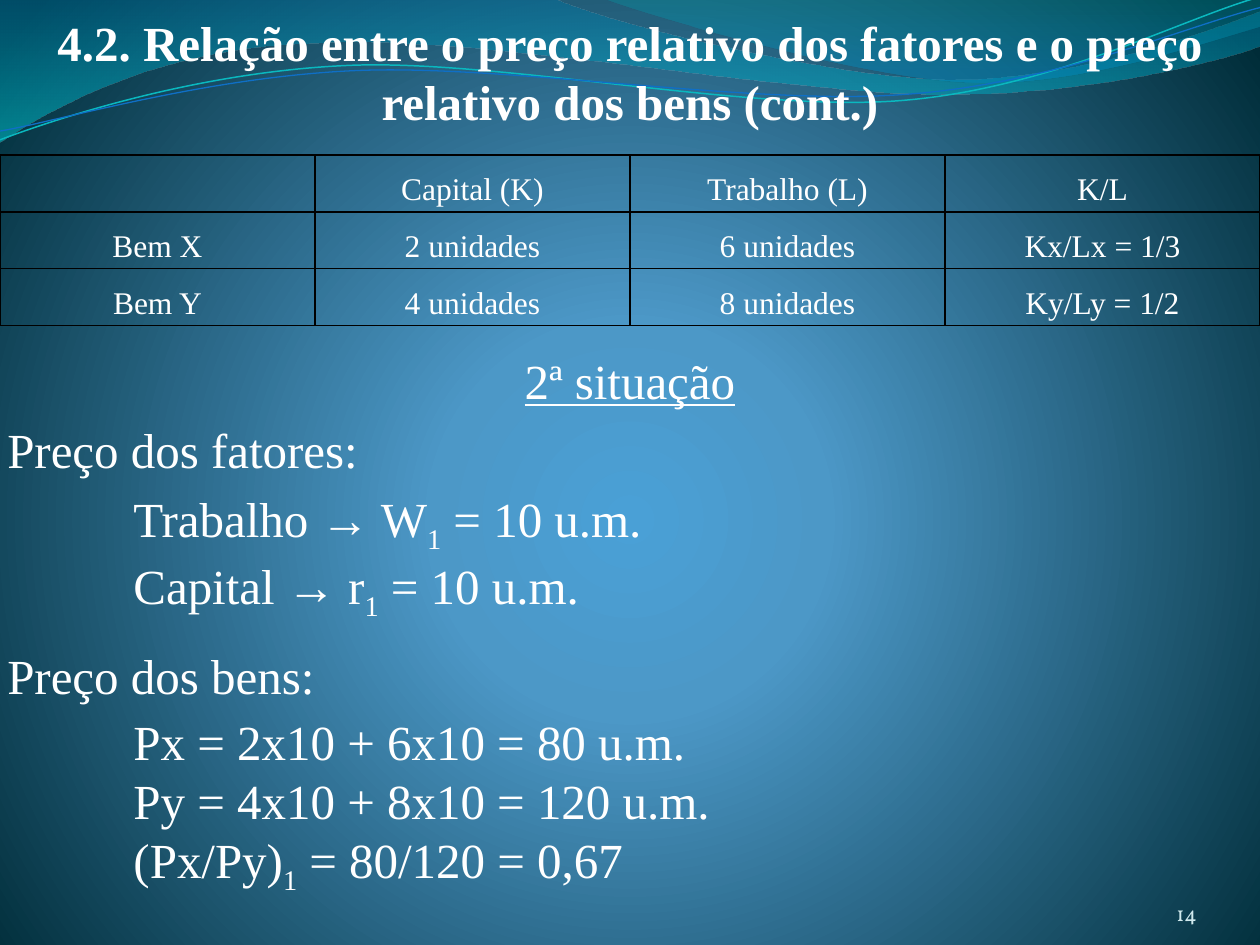
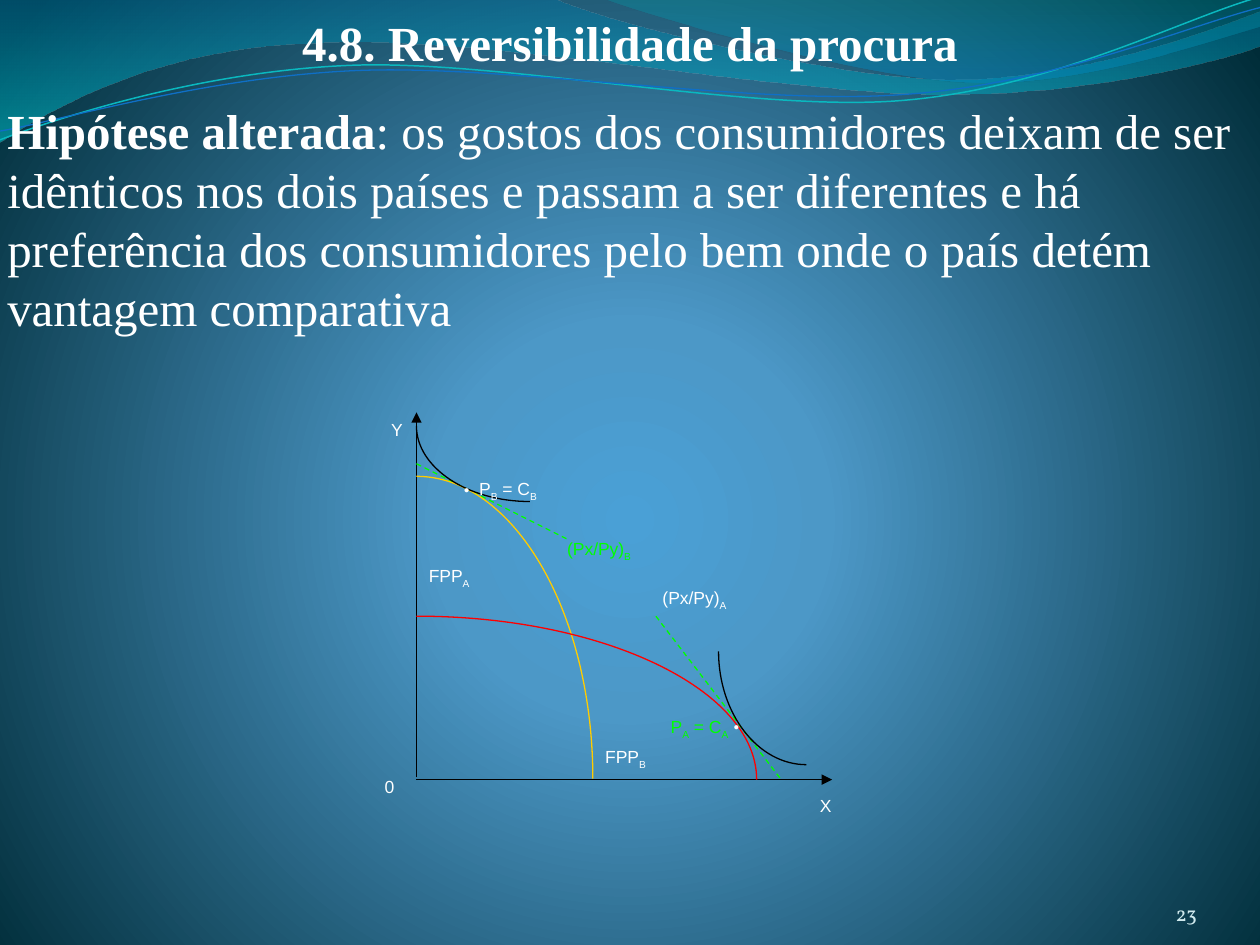
"""Build two slides on relative prices and demand reversal."""
from collections import namedtuple
from dataclasses import dataclass

from lxml import etree
from pptx import Presentation
from pptx.dml.color import RGBColor
from pptx.enum.dml import MSO_LINE
from pptx.enum.shapes import MSO_CONNECTOR
from pptx.enum.text import MSO_ANCHOR, PP_ALIGN
from pptx.oxml import parse_xml
from pptx.oxml.ns import nsdecls, qn
from pptx.util import Pt

CENTER, LEFT, RIGHT = PP_ALIGN.CENTER, PP_ALIGN.LEFT, PP_ALIGN.RIGHT
TOP, MIDDLE, BOTTOM = MSO_ANCHOR.TOP, MSO_ANCHOR.MIDDLE, MSO_ANCHOR.BOTTOM
DASH = MSO_LINE.DASH
STRAIGHT = MSO_CONNECTOR.STRAIGHT

TextStyle = namedtuple("TextStyle", "font size color subscript bold")
Gradient = namedtuple("Gradient", "stops direction")


@dataclass(frozen=True)
class Theme:
    black: str = "000000"
    yellow: str = "FFCC00"
    red: str = "FF0000"
    wave_teal: str = "0AB8BF"
    wave_blue: str = "0F6FC6"
    title: TextStyle = TextStyle("Times New Roman", 28, "FFFFFF", -25, True)
    body: TextStyle = TextStyle("Times New Roman", 28, "FFFFFF", -25, False)
    cell: TextStyle = TextStyle("Times New Roman", 18, "FFFFFF", -25, False)
    dot: TextStyle = TextStyle("Times New Roman", 10, "FFFFFF", -30, False)
    label: TextStyle = TextStyle("Arial", 10, "FFFFFF", -30, False)
    price: TextStyle = TextStyle("Arial", 10, "00FF00", -30, False)
    number: TextStyle = TextStyle("Vollkorn", 12, "D1EAEE", -25, False)
    curve_width: float = 0.75
    border_width: float = 1
    background: Gradient = Gradient(
        [(0, "4AA0D6", ""), (25, "4C98C7", ""), (100, "002C38", "")],
        '<a:path path="circle"><a:fillToRect l="10000" t="110000" r="10000" b="100000"/></a:path>')
    large_wave: Gradient = Gradient(
        [(0, "0074A1", '<a:alpha val="45000"/>'), (100, "00C6CF", '<a:alpha val="55000"/>')],
        '<a:lin ang="5400000" scaled="1"/>')
    small_wave: Gradient = Gradient(
        [(0, "00A1A9", '<a:alpha val="30000"/>'), (80, "008BBF", '<a:alpha val="45000"/>')],
        '<a:lin ang="5400000" scaled="1"/>')


THEME = Theme()


def add_text(frame, paragraphs, style, alignment=LEFT):
    """Write paragraphs of runs; a run is a string or a (string, mark) pair."""
    for index, runs in enumerate(paragraphs):
        paragraph = frame.add_paragraph() if index else frame.paragraphs[0]
        paragraph.alignment = alignment
        for item in runs:
            text, mark = (item, "") if isinstance(item, str) else item
            run = paragraph.add_run()
            run.text = text
            run.font.name = style.font
            run.font.size = Pt(style.size)
            run.font.color.rgb = RGBColor.from_string(style.color)
            run.font.bold = style.bold or mark == "bold"
            if mark == "underline":
                run.font.underline = True
            if mark == "subscript":
                run.font._element.set("baseline", str(style.subscript * 1000))


def add_curve(slide, start, segments, color=None, width=0.75, gradient=None):
    """Draw line and cubic segments, as an open stroke or a gradient area."""
    points = [(Pt(x), Pt(y)) for segment in segments for x, y in segment]
    builder = slide.shapes.build_freeform(Pt(start[0]), Pt(start[1]))
    builder.add_line_segments(points, close=gradient is not None)
    shape = builder.convert_to_shape()
    shape.shadow.inherit = False
    shape.fill.background()
    properties = shape._element.spPr
    steps = iter(list(properties.iter(qn("a:lnTo"))))
    for segment in segments:
        corners = [next(steps) for _ in segment]
        if len(corners) == 3:
            cubic = etree.Element(qn("a:cubicBezTo"))
            corners[0].addprevious(cubic)
            for corner in corners:
                cubic.append(corner[0])
                corner.getparent().remove(corner)
    if gradient:
        shape.line.fill.background()
        properties.replace(properties.find(qn("a:noFill")), parse_xml(gradient))
    else:
        shape.line.color.rgb = RGBColor.from_string(color)
        shape.line.width = Pt(width)
    return shape


gradients = {}
for name in ("background", "large_wave", "small_wave"):
    gradient = getattr(THEME, name)
    stops = "".join(
        f'<a:gs pos="{position * 1000}"><a:srgbClr val="{color}">{alpha}</a:srgbClr></a:gs>'
        for position, color, alpha in gradient.stops)
    gradients[name] = (f'<a:gradFill {nsdecls("a")}><a:gsLst>{stops}</a:gsLst>'
                       f'{gradient.direction}</a:gradFill>')

presentation = Presentation()
presentation.slide_width, presentation.slide_height = Pt(720), Pt(540)
master = presentation.slide_master
master.background.fill.solid()
background = master._element.find(".//" + qn("p:bgPr"))
background.replace(background[0], parse_xml(gradients["background"]))
blank_layout = presentation.slide_layouts[6]
slides = [presentation.slides.add_slide(blank_layout) for _ in range(2)]
price_slide, demand_slide = slides

large_wave = [
    [(316.8, -0.7)],
    [(342.7, 12.2), (478.1, 45.4), (545.8, 45.4)],
    [(614.2, 45.4), (689.8, 18.7), (720, 6.5)],
    [(720.7, 25.9)],
    [(707.8, 31.7), (626.4, 54.7), (537.1, 54)],
    [(447.8, 54), (275, 20.2), (185, 24.5)],
    [(92.9, 25.9), (33.1, 59.8), (-0.7, 81.4)],
]
small_wave = [
    [(366.5, 7.9), (491, 44.6), (553.7, 46.8)],
    [(616.3, 49.7), (691.9, 23), (720, 15.1)],
    [(720, 0)],
]
teal_line = [
    [(34.6, 67), (113.8, 41), (199.4, 37.4)],
    [(284.4, 33.8), (427, 64.1), (513.4, 57.6)],
    [(599.8, 51.1), (675.4, 10.8), (718.6, -1.4)],
]
blue_line = [
    [(33.8, 69.1), (118.1, 43.9), (203.8, 40.3)],
    [(290.2, 36.7), (429.8, 60.5), (516.2, 54)],
    [(601.9, 48.2), (677.5, 15.1), (720, 4.3)],
]
waves = [
    add_curve(price_slide, (0, 0), large_wave, gradient=gradients["large_wave"]),
    add_curve(price_slide, (344.9, -0.7), small_wave, gradient=gradients["small_wave"]),
    add_curve(price_slide, (0, 79.9), teal_line, THEME.wave_teal, 0.85),
    add_curve(price_slide, (0, 74.9), blue_line, THEME.wave_blue),
]
for shape_id, wave in enumerate(waves, 20):
    wave._element.nvSpPr.cNvPr.set("id", str(shape_id))
    master.shapes._spTree.append(wave._element)

one = ("1", "subscript")
price_slide_texts = [
    (0, 196.6, 41, 0, CENTER, [[("2ª situação", "underline")]]),
    (-2.9, 236.2, 41, 0, LEFT, [["Preço dos fatores:"]]),
    (-2.9, 280, 75, 72, LEFT, [["Trabalho → W", one, " = 10 u.m."],
                               ["Capital → r", one, " = 10 u.m."]]),
    (-2.9, 365, 41, 0, LEFT, [["Preço dos bens:"]]),
    (-2.9, 405, 108.7, 72, LEFT, [["Px = 2x10 + 6x10 = 80 u.m."],
                                  ["Py = 4x10 + 8x10 = 120 u.m."],
                                  ["(Px/Py)", one, " = 80/120 = 0,67"]]),
]
demand_slide_texts = [
    (-2.9, 53, 143.3, 0, LEFT, [[
        ("Hipótese alterada", "bold"),
        ": os gostos dos consumidores deixam de ser idênticos nos dois países e passam a ser "
        "diferentes e há preferência dos consumidores pelo bem onde o país detém "
        "vantagem comparativa"]]),
]
pages = [
    ("4.2. Relação entre o preço relativo dos fatores e o preço relativo dos bens (cont.)",
     75, "14", price_slide_texts),
    ("4.8. Reversibilidade da procura", 41, "23", demand_slide_texts),
]

for slide, (title, title_height, number, texts) in zip(slides, pages):
    title_frame = slide.shapes.add_textbox(Pt(0), Pt(3.6), Pt(720), Pt(title_height)).text_frame
    title_frame.word_wrap = True
    add_text(title_frame, [[title]], THEME.title, CENTER)

    number_frame = slide.shapes.add_textbox(Pt(624), Pt(500.4), Pt(60), Pt(28.8)).text_frame
    number_frame.word_wrap = True
    number_frame.vertical_anchor = BOTTOM
    number_frame.margin_left = number_frame.margin_right = 0
    number_frame.margin_top = number_frame.margin_bottom = 0
    add_text(number_frame, [[number]], THEME.number, RIGHT)

    for left, top, height, indent, alignment, paragraphs in texts:
        frame = slide.shapes.add_textbox(Pt(left), Pt(top), Pt(720), Pt(height)).text_frame
        frame.word_wrap = True
        frame.vertical_anchor = MIDDLE
        frame.margin_left = Pt(7.2 + indent)
        add_text(frame, paragraphs, THEME.body, alignment)

factor_rows = [
    ["", "Capital (K)", "Trabalho (L)", "K/L"],
    ["Bem X", "2 unidades", "6 unidades", "Kx/Lx = 1/3"],
    ["Bem Y", "4 unidades", "8 unidades", "Ky/Ly = 1/2"],
]
row_height = 32.3
table = price_slide.shapes.add_table(
    3, 4, Pt(0), Pt(88.6), Pt(720), Pt(3 * row_height)).table
table.first_row = table.horz_banding = False
for row, values in zip(table.rows, factor_rows):
    row.height = Pt(row_height)
    for cell, value in zip(row.cells, values):
        cell.margin_left = cell.margin_right = Pt(5)
        cell.margin_top = cell.margin_bottom = 0
        cell.vertical_anchor = TOP
        for side in ("lnL", "lnR", "lnT", "lnB"):
            cell._tc.get_or_add_tcPr().append(parse_xml(
                f'<a:{side} {nsdecls("a")} w="{Pt(THEME.border_width)}"><a:solidFill>'
                f'<a:srgbClr val="{THEME.black}"/></a:solidFill></a:{side}>'))
        cell.fill.background()
        if value:
            add_text(cell.text_frame, [[value]], THEME.cell, CENTER)
            cell.text_frame.paragraphs[0].line_spacing = 1.5

origin_x, origin_y = 238, 445.5
straight_lines = [
    ((origin_x, 444.2), (origin_x, 235.6), THEME.black, True),
    ((origin_x, origin_y), (475.5, origin_y), THEME.black, True),
    ((origin_x, 265), (324.4, 308.2), THEME.price.color, False),
    ((374.8, 352.1), (446.4, origin_y), THEME.price.color, False),
]
for start, end, color, is_axis in straight_lines:
    connector = demand_slide.shapes.add_connector(
        STRAIGHT, *(Pt(value) for value in start + end))
    connector.line.color.rgb = RGBColor.from_string(color)
    connector.line.width = Pt(THEME.curve_width)
    if is_axis:
        connector.line._get_or_add_ln().append(
            parse_xml(f'<a:tailEnd {nsdecls("a")} type="triangle"/>'))
    else:
        connector.line.dash_style = DASH
    connector._element.spPr.append(parse_xml(f'<a:effectLst {nsdecls("a")}/>'))

quarter_ellipses = [
    ((origin_x, 272.2), (338.8, 445), THEME.yellow),
    ((origin_x, 352.1), (432.4, origin_y), THEME.red),
    ((302.8, 286.6), (origin_x, 243.4), THEME.black),
    ((460.8, 437), (410.6, 372.2), THEME.black),
]
for start, end, color in quarter_ellipses:
    first_control = (start[0] + 0.55 * (end[0] - start[0]), start[1])
    second_control = (end[0], end[1] - 0.55 * (end[1] - start[1]))
    add_curve(demand_slide, start, [[first_control, second_control, end]],
              color, THEME.curve_width)

country_a, country_b = ("A", "subscript"), ("B", "subscript")
diagram_labels = [
    (252.2, 270, 5.56, ["•"], THEME.dot),
    (403.6, 405.4, 8.34, ["•"], THEME.dot),
    (461.5, 451, 0, ["X"], THEME.label),
    (216.4, 235.8, 0, ["Y"], THEME.label),
    (376.2, 405.4, 0, ["P", country_a, " = C", country_a], THEME.price),
    (371.5, 331.9, 0, ["(Px/Py)", country_a], THEME.label),
    (266.8, 269.7, 0, ["P", country_b, " = C", country_b], THEME.label),
    (317, 303.8, 0, ["(Px/Py)", country_b], THEME.price),
    (238, 319.4, 0, ["FPP", country_a], THEME.label),
    (338.8, 422.6, 0, ["FPP", country_b], THEME.label),
    (212.8, 439.9, 0, ["0"], THEME.label),
]
for left, top, indent, runs, style in diagram_labels:
    frame = demand_slide.shapes.add_textbox(Pt(left), Pt(top), Pt(57.6), Pt(28.8)).text_frame
    frame.word_wrap = True
    frame.margin_left = Pt(7.2 + indent)
    add_text(frame, [runs], style)

presentation.save("out.pptx")
